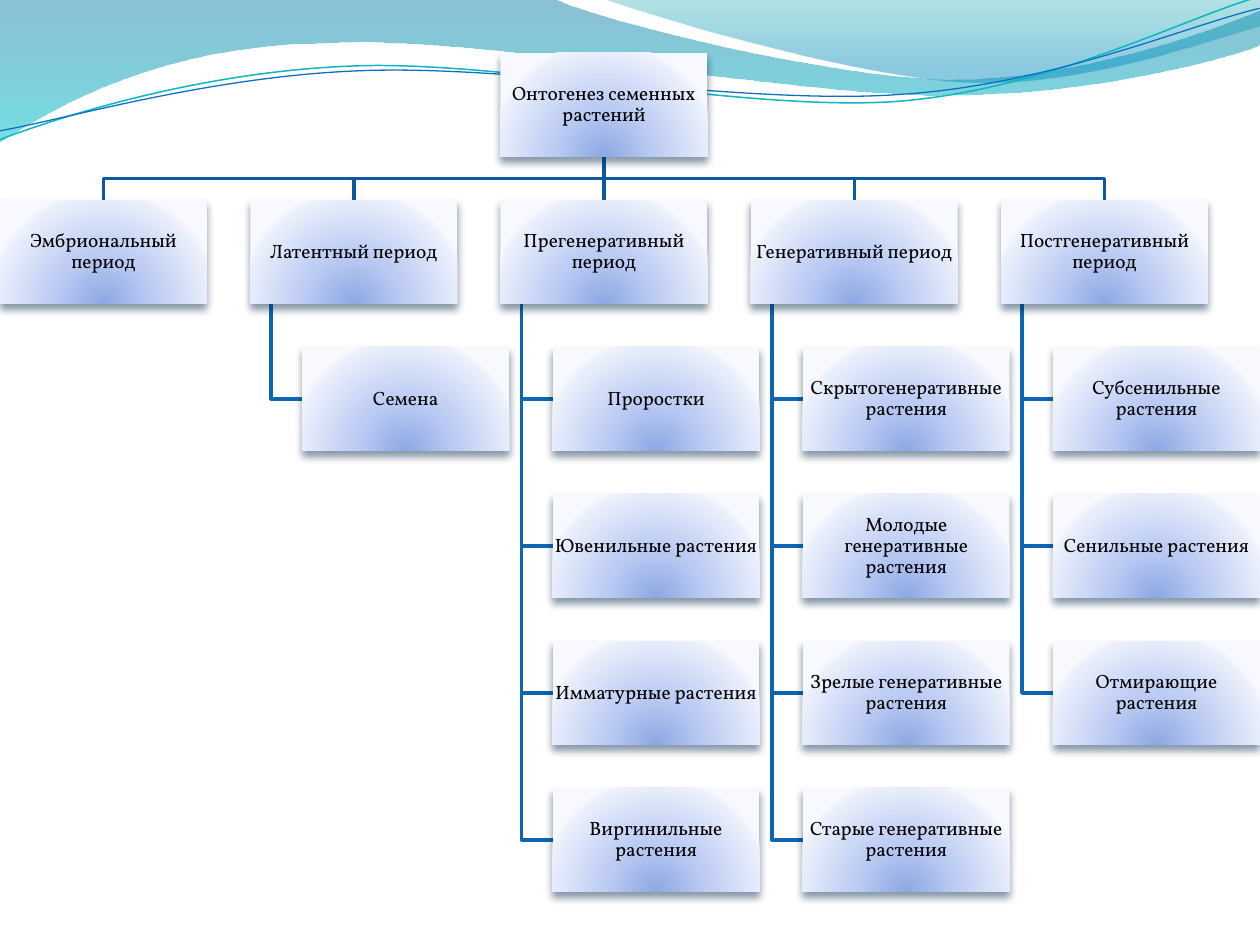
from lxml.etree import SubElement
from pptx import Presentation
from pptx.dml.color import RGBColor
from pptx.enum.shapes import MSO_SHAPE
from pptx.enum.text import MSO_ANCHOR, PP_ALIGN
from pptx.oxml.ns import qn
from pptx.util import Emu, Pt

WHITE = RGBColor(0xFF, 0xFF, 0xFF)
BLACK = RGBColor(0x00, 0x00, 0x00)
TRUNK_BLUE = RGBColor(0x0C, 0x59, 0x9F)
BRANCH_BLUE = RGBColor(0x0E, 0x65, 0xB4)
CURVE_TEAL = RGBColor(0x0A, 0xB8, 0xBF)
CURVE_BLUE = RGBColor(0x0F, 0x6F, 0xC6)
SHADOW_NAVY = RGBColor(0x04, 0x27, 0x47)
WAVE_STOPS = [(0, RGBColor(0x00, 0x74, 0xA1), 45), (100, RGBColor(0x00, 0xC6, 0xCF), 55)]
SWOOSH_STOPS = [(0, RGBColor(0x00, 0xA1, 0xA9), 30), (80, RGBColor(0x00, 0x8B, 0xBF), 45)]
BOX_STOPS = [
    (0, RGBColor(0x8D, 0xA8, 0xE3), 100),
    (43, RGBColor(0xBB, 0xCB, 0xF3), 100),
    (93, RGBColor(0xEA, 0xEF, 0xFB), 100),
    (100, RGBColor(0xF7, 0xF9, 0xFF), 100),
]

BOX_WIDTH, BOX_HEIGHT = 207, 104
ROW_PITCH = 147
CHILD_INDENT, STEM_INDENT = 52, 21
TRUNK_MARGIN = 6
CURVE_TILT = -2.7

TITLE = "Онтогенез семенных растений"
PERIODS = [
    ("Эмбриональный период", []),
    ("Латентный период", ["Семена"]),
    ("Прегенеративный период", [
        "Проростки", "Ювенильные растения", "Имматурные растения", "Виргинильные растения"]),
    ("Генеративный период", [
        "Скрытогенеративные растения", "Молодые генеративные растения",
        "Зрелые генеративные растения", "Старые генеративные растения"]),
    ("Постгенеративный период", [
        "Субсенильные растения", "Сенильные растения", "Отмирающие растения"]),
]

WAVE = [
    (-1, -1), (554, -1),
    (600, 21, 837, 79, 955, 79), (1074, 79, 1207, 33, 1260, 11), (1261, 45),
    (1239, 55, 1096, 96, 940, 95), (784, 95, 481, 35, 324, 43), (163, 45, 58, 105, -1, 142),
]
SWOOSH = [(604, -1), (641, 14, 859, 78, 969, 82), (1079, 87, 1211, 40, 1260, 26), (1260, 0)]
TEAL_CURVE = [
    (-3, 110), (58, 90, 199, 52, 350, 53),
    (499, 53, 745, 118, 896, 114), (1049, 109, 1184, 45, 1260, 27),
]
BLUE_CURVE = [
    (-2, 101), (57, 94, 207, 57, 357, 58),
    (509, 58, 750, 112, 902, 107), (1052, 104, 1188, 52, 1262, 38),
]


def px(length):
    return Emu(round(length * 914400 / 126))


def add_outline(page, box, parts, close=False):
    left, top = box[:2]
    points = [(px(left + part[-2]), px(top + part[-1])) for part in parts]
    builder = page.shapes.build_freeform(*points[0])
    builder.add_line_segments(points[1:], close=close)
    shape = builder.convert_to_shape()
    shape.shadow.inherit = False
    segments = list(shape._element.iter(qn("a:lnTo")))
    for segment, part in zip(segments, parts[1:]):
        if len(part) == 6:
            segment.tag = qn("a:cubicBezTo")
            segment.remove(segment[0])
            for x, y in zip(part[::2], part[1::2]):
                SubElement(
                    segment, qn("a:pt"),
                    x=str(px(left + x) - shape.left), y=str(px(top + y) - shape.top))
    return shape


def add_line(page, box, parts, color, width):
    shape = add_outline(page, box, parts)
    shape.fill.background()
    shape.line.color.rgb = color
    shape.line.width = Pt(width)
    return shape


def add_straight_trunk(page, box, parts):
    shape = add_line(page, box, parts, TRUNK_BLUE, 2)
    margin = px(TRUNK_MARGIN)
    shape.left -= margin
    shape.width = 2 * margin
    next(shape._element.iter(qn("a:path"))).set("w", str(2 * margin))
    for point in shape._element.iter(qn("a:pt")):
        point.set("x", str(margin))


def add_color(parent, color, opacity):
    node = SubElement(parent, qn("a:srgbClr"), val=str(color))
    if opacity < 100:
        SubElement(node, qn("a:alpha"), val=str(opacity * 1000))


def set_gradient(shape, stops, radial=False):
    shape.line.fill.background()
    shape.fill.gradient()
    gradient = shape._element.spPr.find(qn("a:gradFill"))
    for child in list(gradient):
        gradient.remove(child)
    stop_list = SubElement(gradient, qn("a:gsLst"))
    for position, color, opacity in stops:
        stop = SubElement(stop_list, qn("a:gs"), pos=str(position * 1000))
        add_color(stop, color, opacity)
    if radial:
        shade = SubElement(gradient, qn("a:path"), path="circle")
        SubElement(shade, qn("a:fillToRect"), l="50000", t="130000", r="50000", b="-30000")
    else:
        SubElement(gradient, qn("a:lin"), ang="5400000", scaled="1")


def set_shadow(shape):
    shape.shadow.inherit = False
    effects = shape._element.spPr.find(qn("a:effectLst"))
    shadow = SubElement(
        effects, qn("a:outerShdw"), blurRad=str(Pt(4.5)), dist=str(Pt(3)),
        dir="5400000", rotWithShape="0")
    add_color(shadow, SHADOW_NAVY, 48)


def add_waves(page, box):
    for parts, stops in ((WAVE, WAVE_STOPS), (SWOOSH, SWOOSH_STOPS)):
        set_gradient(add_outline(page, box, parts, close=True), stops)
    for parts, color, width in ((TEAL_CURVE, CURVE_TEAL, 0.85), (BLUE_CURVE, CURVE_BLUE, 0.75)):
        add_line(page, box, parts, color, width).rotation = CURVE_TILT


def add_box(page, left, top, text):
    shape = page.shapes.add_shape(
        MSO_SHAPE.RECTANGLE, px(left), px(top), px(BOX_WIDTH), px(BOX_HEIGHT))
    set_gradient(shape, BOX_STOPS, radial=True)
    set_shadow(shape)
    frame = shape.text_frame
    frame.word_wrap = True
    frame.vertical_anchor = MSO_ANCHOR.MIDDLE
    frame.margin_left = frame.margin_right = frame.margin_top = frame.margin_bottom = px(1)
    para = frame.paragraphs[0]
    para.text = text
    para.alignment = PP_ALIGN.CENTER
    para.line_spacing = 0.9
    para.font.name = "Vollkorn"
    para.font.size = Pt(11)
    para.font.color.rgb = BLACK


def add_period(page, box, name, stages):
    left, top = box[:2]
    for row in range(len(stages), 0, -1):
        drop = row * ROW_PITCH + BOX_HEIGHT / 2
        elbow = [(STEM_INDENT, BOX_HEIGHT), (STEM_INDENT, drop), (CHILD_INDENT, drop)]
        add_line(page, box, elbow, BRANCH_BLUE, 2)
    add_box(page, left, top, name)
    for row, stage in enumerate(stages, 1):
        add_box(page, left + CHILD_INDENT, top + row * ROW_PITCH, stage)


def add_tree(page, box):
    left, top, width = box[:3]
    last = len(PERIODS) - 1
    span = width - CHILD_INDENT - BOX_WIDTH
    columns = [column * span / last for column in range(last + 1)]
    middle = columns[last // 2]
    center = middle + BOX_WIDTH / 2
    bend = (BOX_HEIGHT + ROW_PITCH) / 2
    for offset in reversed(columns):
        end = offset + BOX_WIDTH / 2
        if offset == middle:
            add_straight_trunk(page, box, [(center, BOX_HEIGHT), (center, ROW_PITCH)])
        else:
            trunk = [(center, BOX_HEIGHT), (center, bend), (end, bend), (end, ROW_PITCH)]
            add_line(page, box, trunk, TRUNK_BLUE, 2)
    add_box(page, left + middle, top, TITLE)
    for offset, (name, stages) in zip(columns, PERIODS):
        add_period(page, (left + offset, top + ROW_PITCH), name, stages)


def main():
    deck = Presentation()
    deck.slide_width, deck.slide_height = px(1260), px(945)
    page = deck.slides.add_slide(deck.slide_layouts[6])
    page.background.fill.solid()
    page.background.fill.fore_color.rgb = WHITE
    add_waves(page, (0, 0, 1260, 142))
    add_tree(page, (0, 53, 1260, 839))
    deck.save("out.pptx")


if __name__ == "__main__":
    main()
